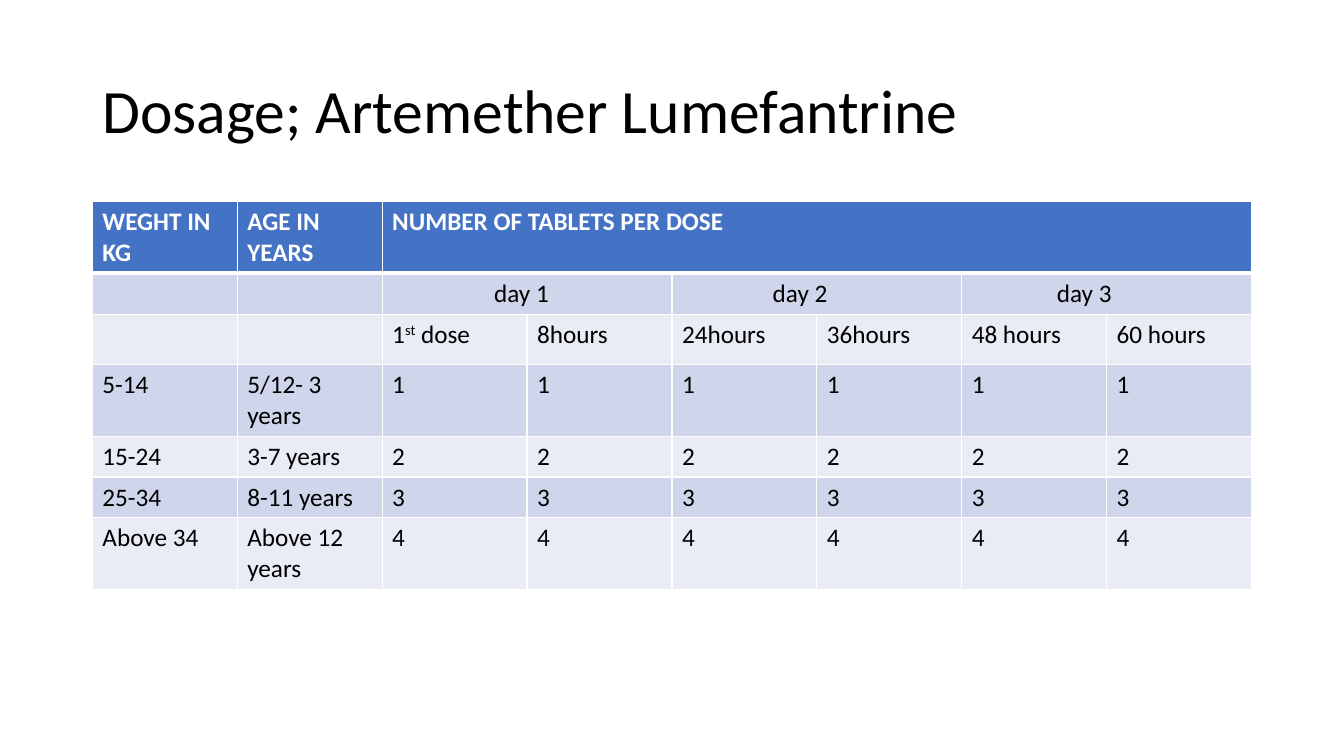
"""Builds the dosage slide for Artemether Lumefantrine."""
from dataclasses import dataclass

from lxml.etree import SubElement
from pptx import Presentation
from pptx.dml.color import RGBColor as RGB
from pptx.enum.text import MSO_ANCHOR as Anchor, MSO_AUTO_SIZE as AutoSize, PP_ALIGN as Align
from pptx.oxml import parse_xml
from pptx.oxml.ns import nsdecls, qn
from pptx.util import Pt


@dataclass(frozen=True)
class Theme:
    font: str = "Calibri"
    title_size: float = 44
    table_size: float = 18
    ink: str = "000000"
    paper: str = "FFFFFF"
    header: str = "4472C4"
    bands: tuple = ("CFD5EA", "E9EBF5")
    rule: float = 1
    header_rule: float = 3


def write(frame, text, *, font, size, color, bold=False, spacing=None):
    """Write text into a frame, raising the parts between carets."""
    paragraph = frame.paragraphs[0]
    paragraph.alignment = Align.LEFT
    paragraph.line_spacing = spacing
    for index, part in enumerate(text.split("^")):
        run = paragraph.add_run()
        run.text = part
        run.font.name, run.font.size, run.font.bold = font, Pt(size), bold
        run.font.color.rgb = RGB.from_string(color)
        if index % 2:
            run.font._element.set("baseline", "30000")


class DosageSlide:
    """Holds the theme and the current slide."""

    def __init__(self, deck, theme):
        self.theme = theme
        self.slide = deck.slides.add_slide(deck.slide_layouts[5])

    def title(self, text, left, top, width, height):
        heading = self.slide.shapes.title
        heading.left, heading.top = Pt(left), Pt(top)
        heading.width, heading.height = Pt(width), Pt(height)
        frame = heading.text_frame
        frame.word_wrap = True
        frame.auto_size = AutoSize.NONE
        frame.vertical_anchor = Anchor.MIDDLE
        write(frame, text, font=self.theme.font, size=self.theme.title_size,
              color=self.theme.ink, spacing=0.9)

    def table(self, rows, heights, left, top, width, spans, indents):
        columns = len(rows[0])
        grid = self.slide.shapes.add_table(
            len(rows), columns, Pt(left), Pt(top), Pt(width), Pt(sum(heights))).table
        for column in grid.columns:
            column.width = Pt(width / columns)
        for r, (texts, height) in enumerate(zip(rows, heights)):
            grid.rows[r].height = Pt(height)
            for c, text in enumerate(texts):
                self.cell(grid.cell(r, c), text, r)
        for r, c, count in spans:
            grid.cell(r, c).merge(grid.cell(r, c + count - 1))
        for (r, c), indent in indents.items():
            grid.cell(r, c).margin_left = Pt(indent)

    def cell(self, cell, text, row):
        theme = self.theme
        is_header = row == 0
        cell.fill.solid()
        cell.fill.fore_color.rgb = RGB.from_string(
            theme.header if is_header else theme.bands[(row - 1) % 2])
        self.borders(cell, top=theme.header_rule if row == 1 else theme.rule,
                     bottom=theme.header_rule if is_header else theme.rule)
        if text:
            write(cell.text_frame, text, font=theme.font, size=theme.table_size,
                  color=theme.paper if is_header else theme.ink, bold=is_header)

    def borders(self, cell, top, bottom):
        properties = cell._tc.get_or_add_tcPr()
        widths = {"lnL": self.theme.rule, "lnR": self.theme.rule, "lnT": top, "lnB": bottom}
        for position, (side, width) in enumerate(widths.items()):
            line = parse_xml(f'<a:{side} {nsdecls("a")} w="{Pt(width)}"/>')
            fill = SubElement(line, qn("a:solidFill"))
            SubElement(fill, qn("a:srgbClr"), val=self.theme.paper)
            properties.insert(position, line)


def main():
    deck = Presentation()
    deck.slide_width, deck.slide_height = Pt(960), Pt(540)
    page = DosageSlide(deck, Theme())
    page.title("Dosage; Artemether Lumefantrine", 66, 28.75, 828, 104.4)

    groups = [("5-14", "5/12- 3 years"), ("15-24", "3-7 years"),
              ("25-34", "8-11 years"), ("Above 34", "Above 12 years")]
    rows = [
        ["WEGHT IN KG", "AGE IN YEARS", "NUMBER OF TABLETS PER DOSE"] + [""] * 5,
        ["", "", "day 1", "", "day 2", "", "day 3", ""],
        ["", "", "1^st^ dose", "8hours", "24hours", "36hours", "48 hours", "60 hours"],
    ]
    rows += [[weight, age] + [str(tablets)] * 6
             for tablets, (weight, age) in enumerate(groups, 1)]
    one_line, two_lines, dose_times = 29.2, 51, 36
    heights = [two_lines, one_line, dose_times, two_lines, one_line, one_line, two_lines]
    page.table(rows, heights, 66, 144, 828,
               spans=[(0, 2, 6)] + [(1, c, 2) for c in (2, 4, 6)],
               indents={(1, 2): 80, (1, 4): 72, (1, 6): 68})
    deck.save("out.pptx")


if __name__ == "__main__":
    main()
